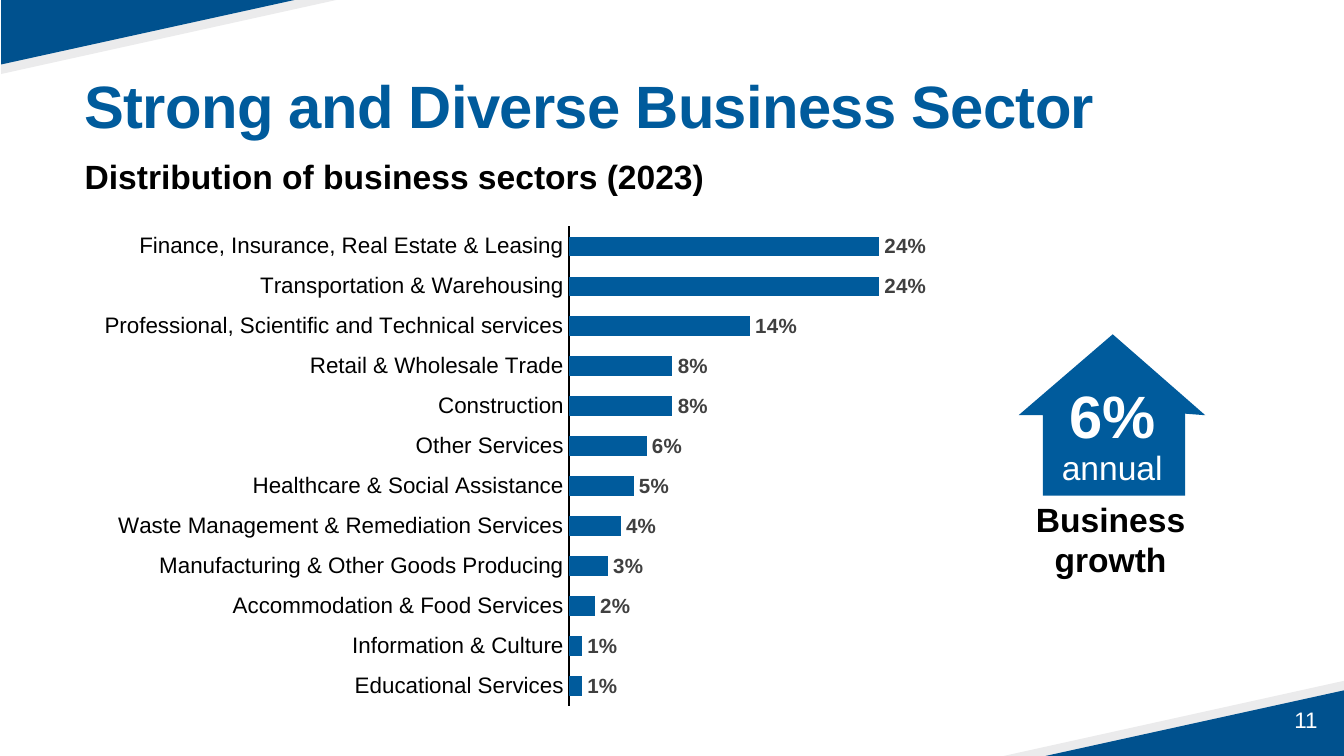
import pptx
import pptx.chart.data
import pptx.dml.color
import pptx.enum.chart
import pptx.enum.text
import pptx.oxml
import pptx.oxml.ns
import pptx.util

Cm = pptx.util.Cm
Pt = pptx.util.Pt
RGBColor = pptx.dml.color.RGBColor
ALIGN = pptx.enum.text.PP_ALIGN
ANCHOR = pptx.enum.text.MSO_ANCHOR

BLUE = RGBColor(0x00, 0x5B, 0x9C)
DARK_BLUE = RGBColor(0x00, 0x51, 0x8E)
PALE_GREY = RGBColor(0xEB, 0xEB, 0xEC)
LABEL_GREY = RGBColor(0x40, 0x40, 0x40)
BLACK = RGBColor(0, 0, 0)
WHITE = RGBColor(0xFF, 0xFF, 0xFF)

FONT = "Arial"
WIDTH, HEIGHT = 25.4, 14.29

SECTORS = [
    ("Educational Services", 0.01),
    ("Information & Culture", 0.01),
    ("Accommodation & Food Services", 0.02),
    ("Manufacturing & Other Goods Producing", 0.03),
    ("Waste Management & Remediation Services", 0.04),
    ("Healthcare & Social Assistance", 0.05),
    ("Other Services", 0.06),
    ("Construction", 0.08),
    ("Retail & Wholesale Trade", 0.08),
    ("Professional, Scientific and Technical services", 0.14),
    ("Transportation & Warehousing", 0.24),
    ("Finance, Insurance, Real Estate & Leasing", 0.24),
]


def style_font(font, size, color, bold=False):
    font.name = FONT
    font.size = Pt(size)
    font.bold = bold
    font.color.rgb = color


def add_polygon(s, points, color):
    points = [(Cm(x), Cm(y)) for x, y in points]
    builder = s.shapes.build_freeform(*points[0])
    builder.add_line_segments(points[1:], close=True)
    sp = builder.convert_to_shape()
    sp.shadow.inherit = False
    sp.fill.solid()
    sp.fill.fore_color.rgb = color
    sp.line.fill.background()


def add_corner(s, x, y, direction):
    """Two stacked wedges; direction is 1 (inward from top left) or -1."""
    for w, h, color in ((6.43, 1.42, PALE_GREY), (5.64, 1.24, DARK_BLUE)):
        wedge = [(x, y), (x + direction * w, y), (x, y + direction * h)]
        add_polygon(s, wedge, color)


def add_text(s, box, runs, align=ALIGN.LEFT, anchor=ANCHOR.TOP, spacing=None):
    """Each run is (text, size, color, bold)."""
    tf = s.shapes.add_textbox(*(Cm(v) for v in box)).text_frame
    tf.word_wrap = True
    tf.vertical_anchor = anchor
    p = tf.paragraphs[0]
    p.alignment = align
    p.line_spacing = spacing
    for text, size, color, bold in runs:
        r = p.add_run()
        r.text = text
        style_font(r.font, size, color, bold)
    return p


def set_plot_layout(chart, x, y, w, h):
    """Fix the inner plot area, in fractions of the chart."""
    plot_area = chart.plots[0]._element.getparent()
    for old in plot_area.findall(pptx.oxml.ns.qn("c:layout")):
        plot_area.remove(old)
    sizes = "".join(f'<c:{tag} val="{v}"/>' for tag, v in zip("xywh", (x, y, w, h)))
    plot_area.insert(0, pptx.oxml.parse_xml(
        f'<c:layout {pptx.oxml.ns.nsdecls("c")}><c:manualLayout>'
        '<c:layoutTarget val="inner"/><c:xMode val="edge"/><c:yMode val="edge"/>'
        f'{sizes}</c:manualLayout></c:layout>'))


def add_sector_chart(s, box):
    data = pptx.chart.data.CategoryChartData(number_format="0%")
    data.categories = [name for name, _ in SECTORS]
    data.add_series("Series 1", [share for _, share in SECTORS])
    chart = s.shapes.add_chart(pptx.enum.chart.XL_CHART_TYPE.BAR_CLUSTERED,
                               *(Cm(v) for v in box), data).chart
    style_font(chart.font, 10, BLACK)
    chart.has_legend = False
    chart.has_title = False
    set_plot_layout(chart, 0.61, 0.04, 0.35, 0.94)

    # Axes
    axis = chart.category_axis
    axis.major_tick_mark = pptx.enum.chart.XL_TICK_MARK.NONE
    axis.format.line.color.rgb = BLACK
    axis.format.line.width = Pt(0.75)
    style_font(axis.tick_labels.font, 12, BLACK)
    values = chart.value_axis
    values.minimum_scale, values.maximum_scale = 0, 0.3
    values.has_major_gridlines = False
    values.visible = False

    # Bars and their labels
    plot = chart.plots[0]
    plot.gap_width = 108
    plot.vary_by_categories = False
    series = plot.series[0]
    series.format.fill.solid()
    series.format.fill.fore_color.rgb = BLUE
    labels = series.data_labels
    labels.show_value = True
    labels.number_format = "0%"
    labels.number_format_is_linked = False
    labels.position = pptx.enum.chart.XL_LABEL_POSITION.OUTSIDE_END
    style_font(labels.font, 11, LABEL_GREY, True)


def main():
    prs = pptx.Presentation()
    prs.slide_width, prs.slide_height = Cm(WIDTH), Cm(HEIGHT)
    s = prs.slides.add_slide(prs.slide_layouts[6])

    # Corner decoration and slide number
    add_corner(s, 0.02, -0.02, 1)
    add_corner(s, WIDTH, HEIGHT, -1)
    add_text(s, (19.23, 13.23, 5.92, 0.76), [("11", 12, WHITE, False)],
             ALIGN.RIGHT, ANCHOR.MIDDLE)

    # Headings
    title = add_text(s, (1.35, 1.32, 21.9, 1.73),
                     [("Strong and Diverse Business Sector", 32, BLUE, True)],
                     spacing=0.9)
    title.runs[0].font._element.set("spc", "-40")
    add_text(s, (1.35, 2.82, 12.95, 1.02),
             [("Distribution of business sectors (2023)", 18, BLACK, True)])

    # Growth arrow
    add_polygon(s, [(19.25, 7.85), (21.03, 6.32), (22.78, 7.85), (22.4, 7.82),
                    (22.4, 9.37), (19.71, 9.37), (19.71, 7.85)], BLUE)

    add_sector_chart(s, (-2.01, 3.89, 20.93, 9.65))

    # Growth figures
    add_text(s, (19.28, 7.19, 3.48, 2.18),
             [("6% ", 32, WHITE, True), ("annual", 18, WHITE, False)],
             ALIGN.CENTER, spacing=0.9)
    add_text(s, (19.25, 9.3, 3.48, 1.8),
             [("Business growth", 18, BLACK, True)], ALIGN.CENTER)

    prs.save("out.pptx")


if __name__ == "__main__":
    main()
